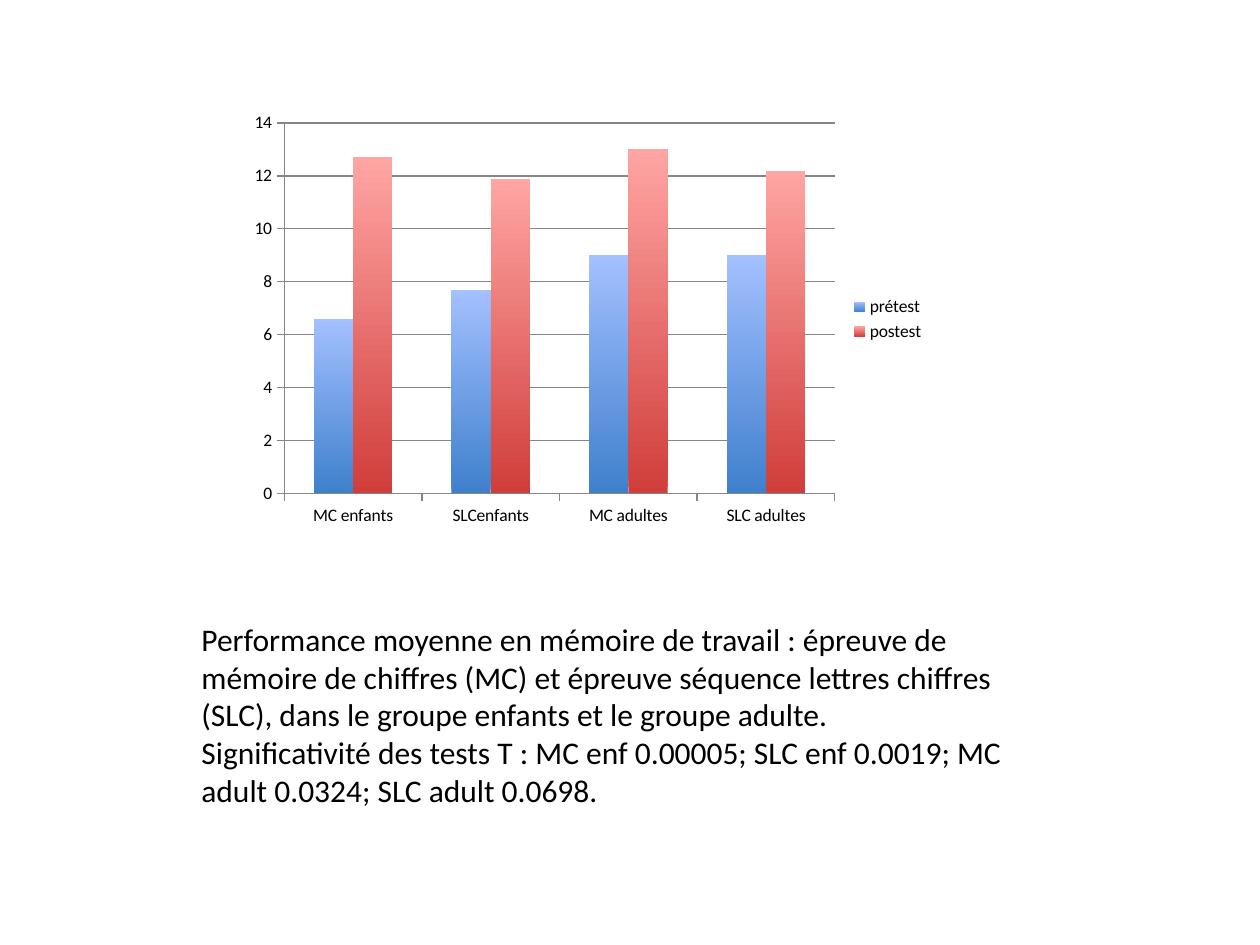
from pptx import Presentation
from pptx.chart.data import CategoryChartData
from pptx.dml.color import RGBColor
from pptx.enum.chart import XL_CHART_TYPE, XL_LEGEND_POSITION, XL_TICK_MARK
from pptx.util import Inches, Pt

COLUMNS = XL_CHART_TYPE.COLUMN_CLUSTERED
RIGHT = XL_LEGEND_POSITION.RIGHT
OUTSIDE = XL_TICK_MARK.OUTSIDE
NO_TICK = XL_TICK_MARK.NONE

FONT = "Calibri"
BLACK = RGBColor(0x00, 0x00, 0x00)
GREY = RGBColor(0x86, 0x86, 0x86)
# Bottom and top colour of each series
BLUES = (RGBColor(0x3F, 0x80, 0xCD), RGBColor(0xA3, 0xC0, 0xFF))
REDS = (RGBColor(0xD0, 0x3E, 0x3B), RGBColor(0xFF, 0xA5, 0xA3))

CAPTION = (
    "Performance moyenne en mémoire de travail : épreuve de mémoire de chiffres (MC) "
    "et épreuve séquence lettres chiffres (SLC), dans le groupe enfants et le groupe adulte.",
    "Significativité des tests T : MC enf 0.00005; SLC enf 0.0019; "
    "MC adult 0.0324; SLC adult 0.0698.",
)

deck = Presentation()
deck.slide_width = Inches(10)
deck.slide_height = Inches(7.5)
slide = deck.slides.add_slide(deck.slide_layouts[6])

# Chart of mean scores
data = CategoryChartData()
data.categories = ["MC enfants", "SLCenfants", "MC adultes", "SLC adultes"]
data.add_series("prétest", (6.6, 7.7, 9, 9))
data.add_series("postest", (12.7, 11.9, 13, 12.2))
chart = slide.shapes.add_chart(
    COLUMNS, Inches(1.91), Inches(0.83), Inches(5.53), Inches(3.41), data
).chart
chart.has_title = False
chart.font.name = FONT
chart.font.size = Pt(10)
chart.font.color.rgb = BLACK
chart.has_legend = True
chart.legend.position = RIGHT
chart.legend.include_in_layout = False

scores = chart.value_axis
scores.minimum_scale = 0
scores.maximum_scale = 14
scores.major_unit = 2
scores.has_major_gridlines = True
for axis in (chart.category_axis, scores):
    axis.major_tick_mark = OUTSIDE
    axis.minor_tick_mark = NO_TICK
    axis.format.line.color.rgb = GREY
    axis.format.line.width = Pt(0.75)
grid = scores.major_gridlines.format.line
grid.color.rgb = GREY
grid.width = Pt(0.75)

plot = chart.plots[0]
plot.gap_width = 150
plot.overlap = 0
plot.vary_by_categories = False
for series, shades in zip(plot.series, (BLUES, REDS)):
    series.invert_if_negative = False
    fill = series.format.fill
    fill.gradient()
    fill.gradient_angle = 90
    for stop, shade in zip(fill.gradient_stops, shades):
        stop.color.rgb = shade

# Caption below the chart
box = slide.shapes.add_textbox(Inches(1.5), Inches(4.87), Inches(6.69), Inches(1.62))
frame = box.text_frame
frame.word_wrap = True
frame.text = "\n".join(CAPTION)
for line in frame.paragraphs:
    for run in line.runs:
        run.font.name = FONT
        run.font.size = Pt(18)
        run.font.color.rgb = BLACK

deck.save("out.pptx")
